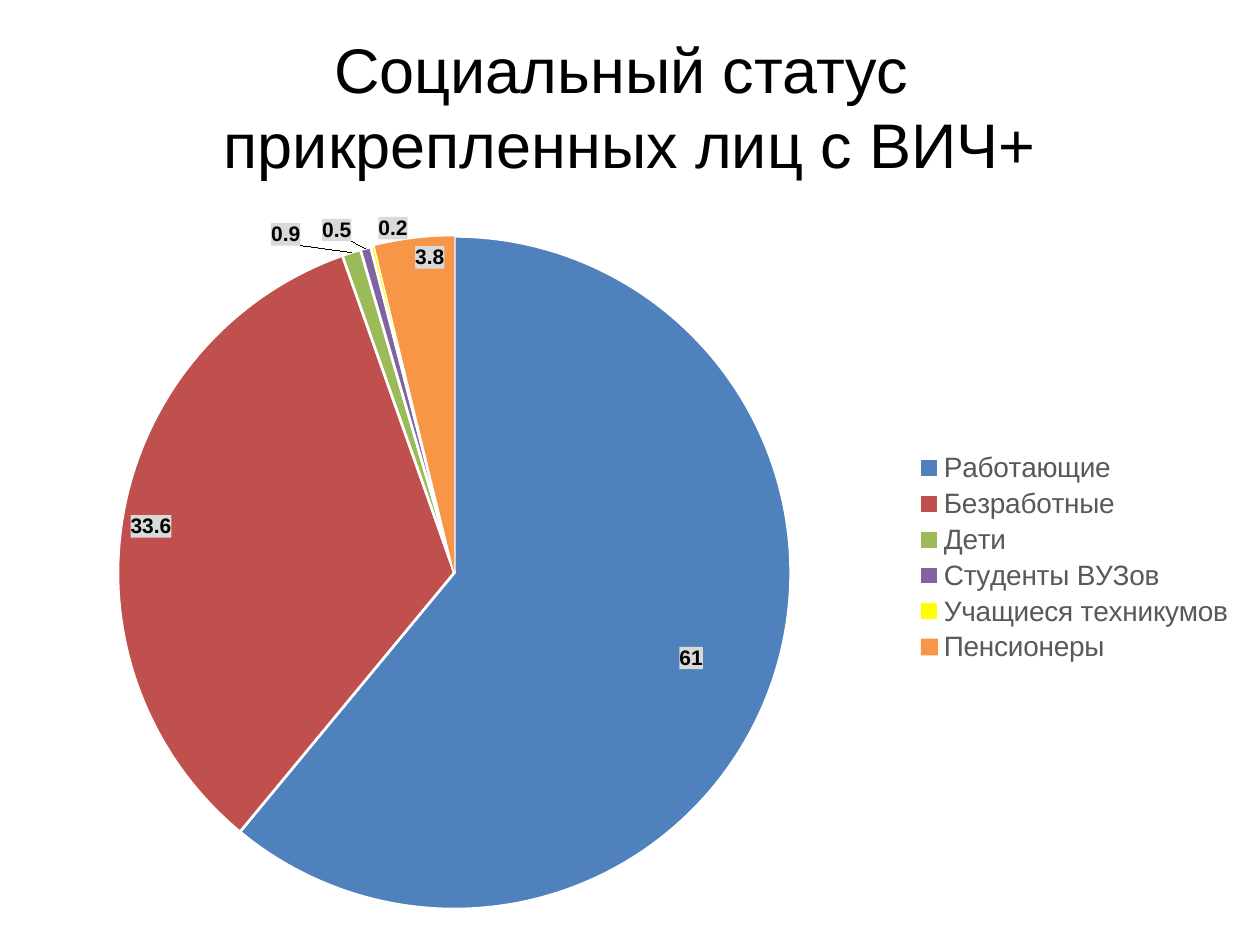
from lxml.etree import SubElement
from pptx import Presentation
from pptx.chart.data import CategoryChartData
from pptx.dml.color import RGBColor
from pptx.enum.chart import XL_CHART_TYPE, XL_LABEL_POSITION, XL_LEGEND_POSITION
from pptx.enum.text import MSO_ANCHOR, PP_ALIGN
from pptx.oxml import parse_xml
from pptx.oxml.ns import nsdecls, qn
from pptx.util import Inches, Pt

TITLE = "Социальный статус \vприкрепленных лиц с ВИЧ+"
INSIDE, OUTSIDE = XL_LABEL_POSITION.INSIDE_END, XL_LABEL_POSITION.OUTSIDE_END
SLICES = [
    ("Работающие", 61, "4F81BD", INSIDE, (-0.05, -0.02)),
    ("Безработные", 33.6, "C0504D", INSIDE, None),
    ("Дети", 0.9, "9BBB59", OUTSIDE, (-0.04, 0)),
    ("Студенты ВУЗов", 0.5, "8064A2", OUTSIDE, (-0.01, 0)),
    ("Учащиеся техникумов", 0.2, "FFFF00", OUTSIDE, (0.03, 0)),
    ("Пенсионеры", 3.8, "F79646", INSIDE, None),
]
CHART_BOX = (0.2, 1.47, 9.69, 5.91)
PIE_BOX = (0.94, 1.87, 5.34, 5.35)
LEGEND_BOX = (7.25, 3.55, 2.55, 1.75)


def color(value):
    """Return the colour for a hex string."""
    return RGBColor.from_string(value)


def set_font(font, size, value="000000", bold=False):
    """Format a font in Arial."""
    font.name, font.size, font.bold = "Arial", Pt(size), bold
    font.color.rgb = color(value)


def add_text(slide, text, box, size):
    """Add a centred text box."""
    frame = slide.shapes.add_textbox(*map(Inches, box)).text_frame
    frame.word_wrap = True
    frame.vertical_anchor = MSO_ANCHOR.MIDDLE
    paragraph = frame.paragraphs[0]
    paragraph.text = text
    paragraph.alignment = PP_ALIGN.CENTER
    set_font(paragraph.font, size)


def make_layout(**values):
    """Build a manual chart layout."""
    layout = parse_xml(f"<c:layout {nsdecls('c')}><c:manualLayout/></c:layout>")
    for name, value in values.items():
        SubElement(layout[0], qn(f"c:{name}")).set("val", str(value))
    return layout


def box_layout(box, **modes):
    """Build a layout from a box in slide inches."""
    left, top, width, height = CHART_BOX
    return make_layout(
        **modes, xMode="edge", yMode="edge",
        x=round((box[0] - left) / width, 3), y=round((box[1] - top) / height, 3),
        w=round(box[2] / width, 3), h=round(box[3] / height, 3))


def replace_layout(parent, layout, index):
    """Put a layout in place of any present one."""
    for old in parent.findall(qn("c:layout")):
        parent.remove(old)
    parent.insert(index, layout)


def format_slice(series, index, fill, position, offset):
    """Colour a slice and place its label."""
    point = series.points[index]
    point.format.fill.solid()
    point.format.fill.fore_color.rgb = color(fill)
    if index < len(SLICES) - 1:
        point.format.line.color.rgb = color("FFFFFF")
        point.format.line.width = Pt(1.5)
    label = point.data_label
    set_font(label.font, 12, bold=True)
    label.position = position
    element = series.data_labels._element.findall(qn("c:dLbl"))[index]
    for old in element.findall(qn("c:spPr")):
        element.remove(old)
    element.insert(1, parse_xml(
        f'<c:spPr {nsdecls("c", "a")}><a:solidFill><a:srgbClr val="D9D9D9"/>'
        "</a:solidFill></c:spPr>"))
    if offset:
        replace_layout(element, make_layout(x=offset[0], y=offset[1]), 1)


def add_pie(slide):
    """Add the pie chart with its legend."""
    data = CategoryChartData()
    data.categories = [row[0] for row in SLICES]
    data.add_series("Series 1", [row[1] for row in SLICES])
    chart = slide.shapes.add_chart(
        XL_CHART_TYPE.PIE, *map(Inches, CHART_BOX), data).chart
    chart.has_title = False
    chart.font.name, chart.font.size = "Calibri", Pt(10)
    chart.has_legend = True
    legend = chart.legend
    legend.position = XL_LEGEND_POSITION.RIGHT
    legend.include_in_layout = False
    set_font(legend.font, 16, "595959")
    replace_layout(legend._element, box_layout(LEGEND_BOX), 1)
    plot = chart.plots[0]
    plot.vary_by_categories = True
    series = plot.series[0]
    series.data_labels.show_value = True
    set_font(series.data_labels.font, 12, bold=True)
    for index, (_, _, fill, position, offset) in enumerate(SLICES):
        format_slice(series, index, fill, position, offset)
    area = chart._chartSpace.chart.plotArea
    replace_layout(area, box_layout(PIE_BOX, layoutTarget="inner"), 0)


def main():
    """Build and save the slide."""
    presentation = Presentation()
    presentation.slide_width, presentation.slide_height = Inches(10), Inches(7.5)
    slide = presentation.slides.add_slide(presentation.slide_layouts[6])
    add_text(slide, TITLE, (0.5, 0.13, 9, 1.42), 36)
    add_pie(slide)
    presentation.save("out.pptx")


if __name__ == "__main__":
    main()
